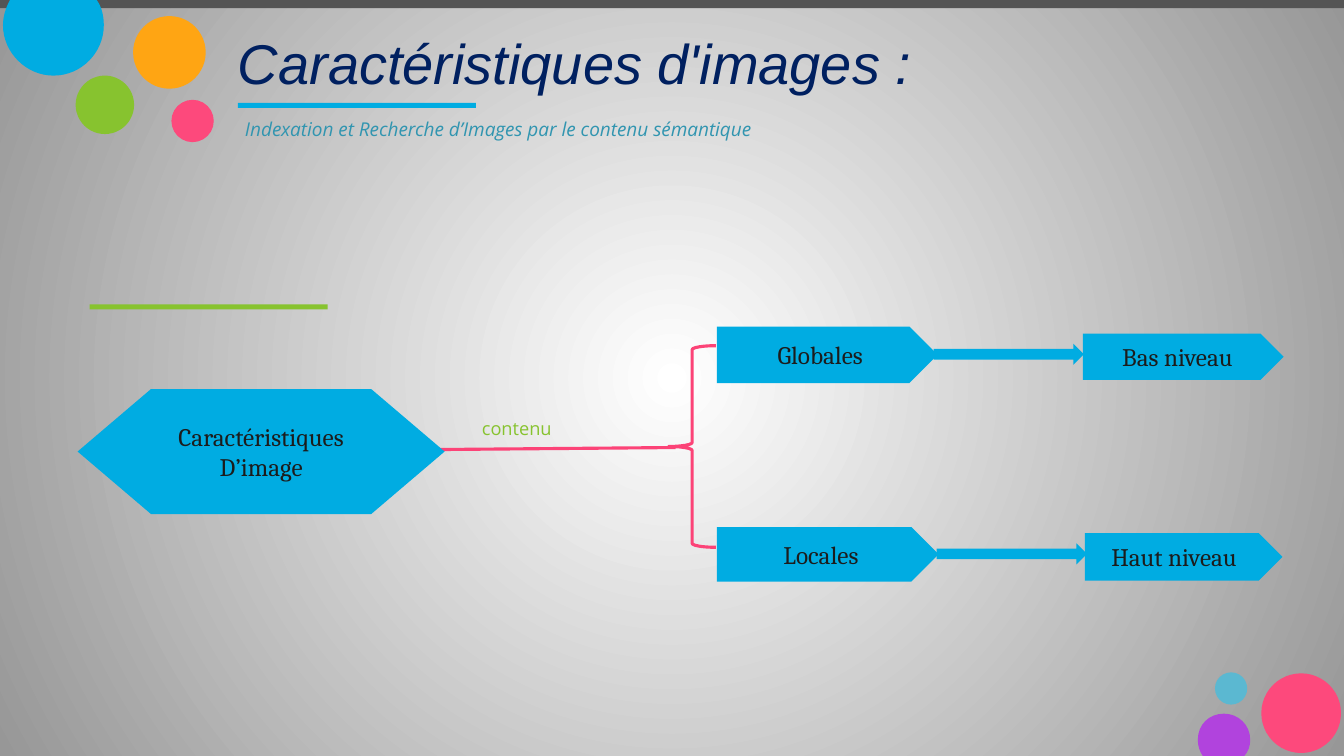
"""Builds the slide on global and local image features."""
from lxml.etree import SubElement
from pptx import Presentation
from pptx.dml.color import RGBColor
from pptx.enum.shapes import MSO_CONNECTOR, MSO_SHAPE
from pptx.enum.text import MSO_ANCHOR, PP_ALIGN
from pptx.oxml.ns import qn
from pptx.util import Inches, Pt

WIDTH, HEIGHT = 13.33, 7.5
COLORS = {
    "white": "FFFFFF", "edge": "979797", "bar": "545454", "blue": "00ACE2",
    "green": "87C32F", "orange": "FFA513", "pink": "FD497C", "sky": "5BB8D1",
    "purple": "B143DD", "line": "FC4377", "navy": "002060", "teal": "3195B0",
    "ink": "1C1C1C",
}
BARS = [
    (0, 0, WIDTH, 0.08, "bar"),
    (0.89, 3.02, 2.36, 0.05, "green"),
    (2.36, 1.02, 2.36, 0.05, "blue"),
]
CIRCLES = [
    (1.7, 0.99, 0.42, "pink"),
    (0.75, 0.75, 0.58, "green"),
    (1.32, 0.16, 0.72, "orange"),
    (12.05, 6.67, 0.32, "sky"),
    (12.51, 6.68, 0.79, "pink"),
]
CUT_CIRCLES = [
    ("blue", [
        (0.96, 0),
        (1.01, 0.07), (1.03, 0.16), (1.03, 0.25),
        (1.03, 0.52), (0.81, 0.75), (0.53, 0.75),
        (0.26, 0.75), (0.03, 0.52), (0.03, 0.25),
        (0.03, 0.16), (0.06, 0.07), (0.1, 0),
    ]),
    ("purple", [
        (11.93, 7.5),
        (11.9, 7.46), (11.88, 7.4), (11.88, 7.34),
        (11.88, 7.19), (11.99, 7.08), (12.14, 7.08),
        (12.28, 7.08), (12.4, 7.19), (12.4, 7.34),
        (12.4, 7.4), (12.38, 7.46), (12.34, 7.5),
    ]),
]
TEXTS = [
    ("Caractéristiques d'images :", (2.24, 0.18, 10.46, 0.88),
     "Arial", 40, "navy", True, MSO_ANCHOR.MIDDLE, 1),
    ("Indexation et Recherche d’Images par le contenu sémantique",
     (2.31, 1.13, 10.45, 0.37), "Open Sans", 13.6, "teal", True, MSO_ANCHOR.TOP, 0.9),
    ("contenu", (4.66, 4.05, 1.2, 0.4),
     "Open Sans", 13, "green", False, MSO_ANCHOR.MIDDLE, 1),
]
NODES = [
    ("Caractéristiques\nD’image", MSO_SHAPE.FLOWCHART_PREPARATION,
     (0.77, 3.86, 3.64, 1.24), 0.1),
    ("Globales", MSO_SHAPE.PENTAGON, (7.11, 3.24, 2.19, 0.56), 0.1),
    ("Locales", MSO_SHAPE.PENTAGON, (7.11, 5.23, 2.2, 0.54), 0.1),
    ("Bas niveau", MSO_SHAPE.PENTAGON, (10.74, 3.31, 1.99, 0.46), 0.1),
    ("Haut niveau", MSO_SHAPE.PENTAGON, (10.76, 5.29, 1.96, 0.47), 0.17),
]
ARROWS = [(9.26, 3.41, 1.49, 0.21), (9.29, 5.39, 1.49, 0.21)]
BRACE = (6.63, 3.43, 0.47, 2)
LINK = (4.33, 4.46, 6.7, 4.44)


def color(name):
    return RGBColor.from_string(COLORS[name])


def paint(shape, fill):
    shape.shadow.inherit = False
    shape.fill.solid()
    shape.fill.fore_color.rgb = color(fill)
    shape.line.fill.background()


def add_filled(slide, kind, box, fill):
    shape = slide.shapes.add_shape(kind, *map(Inches, box))
    paint(shape, fill)
    return shape


def add_cut_circle(slide, fill, points):
    start, *rest = [(Inches(x), Inches(y)) for x, y in points]
    builder = slide.shapes.build_freeform(*start)
    builder.add_line_segments(rest, close=True)
    shape = builder.convert_to_shape()
    paint(shape, fill)
    outline_path = shape.element.find(".//" + qn("a:path"))
    segments = outline_path.findall(qn("a:lnTo"))
    for first in range(0, len(segments), 3):
        curve = SubElement(outline_path, qn("a:cubicBezTo"))
        for segment in segments[first:first + 3]:
            curve.append(segment[0])
            outline_path.remove(segment)
    outline_path.append(outline_path.find(qn("a:close")))


def write(shape, text, font_name, size, ink, italic=False, align=PP_ALIGN.LEFT,
          anchor=MSO_ANCHOR.MIDDLE, spacing=1):
    frame = shape.text_frame
    frame.word_wrap = True
    frame.vertical_anchor = anchor
    frame.text = text
    for paragraph in frame.paragraphs:
        paragraph.alignment = align
        paragraph.line_spacing = float(spacing)
        for run in paragraph.runs:
            run.font.name = font_name
            run.font.size = Pt(size)
            run.font.italic = italic
            run.font.color.rgb = color(ink)


def add_text(slide, text, box, font_name, size, ink, italic, anchor, spacing):
    shape = slide.shapes.add_textbox(*map(Inches, box))
    frame = shape.text_frame
    frame.margin_left = frame.margin_right = Inches(0.12)
    frame.margin_top = frame.margin_bottom = Inches(0.06)
    write(shape, text, font_name, size, ink, italic, anchor=anchor, spacing=spacing)


def set_background(slide):
    fill = slide.background.fill
    fill.gradient()
    for stop, name in zip(fill.gradient_stops, ("white", "edge")):
        stop.color.rgb = color(name)
    gradient = slide.element.find(".//" + qn("a:gradFill"))
    linear = gradient.find(qn("a:lin"))
    radial = SubElement(gradient, qn("a:path"), {"path": "circle"})
    SubElement(radial, qn("a:fillToRect"), {side: "50000" for side in "ltrb"})
    gradient.replace(linear, radial)


def outline(shape):
    shape.line.color.rgb = color("line")
    shape.line.width = Pt(2.25)


def add_branch(slide):
    brace = slide.shapes.add_shape(MSO_SHAPE.LEFT_BRACE, *map(Inches, BRACE))
    brace.shadow.inherit = False
    brace.fill.background()
    outline(brace)
    link = slide.shapes.add_connector(MSO_CONNECTOR.STRAIGHT, *map(Inches, LINK))
    outline(link)
    SubElement(link.element.find(qn("p:spPr")), qn("a:effectLst"))


def main():
    presentation = Presentation()
    presentation.slide_width = Inches(WIDTH)
    presentation.slide_height = Inches(HEIGHT)
    slide = presentation.slides.add_slide(presentation.slide_layouts[6])
    set_background(slide)
    for *box, fill in BARS:
        add_filled(slide, MSO_SHAPE.RECTANGLE, box, fill)
    for left, top, size, fill in CIRCLES:
        add_filled(slide, MSO_SHAPE.OVAL, (left, top, size, size), fill)
    for fill, points in CUT_CIRCLES:
        add_cut_circle(slide, fill, points)
    for text in TEXTS:
        add_text(slide, *text)
    add_branch(slide)
    for label, kind, box, margin_right in NODES:
        node = add_filled(slide, kind, box, "blue")
        node.text_frame.margin_right = Inches(margin_right)
        write(node, label, "Cambria", 18, "ink", align=PP_ALIGN.CENTER)
    for box in ARROWS:
        add_filled(slide, MSO_SHAPE.RIGHT_ARROW, box, "blue")
    presentation.save("out.pptx")


if __name__ == "__main__":
    main()
